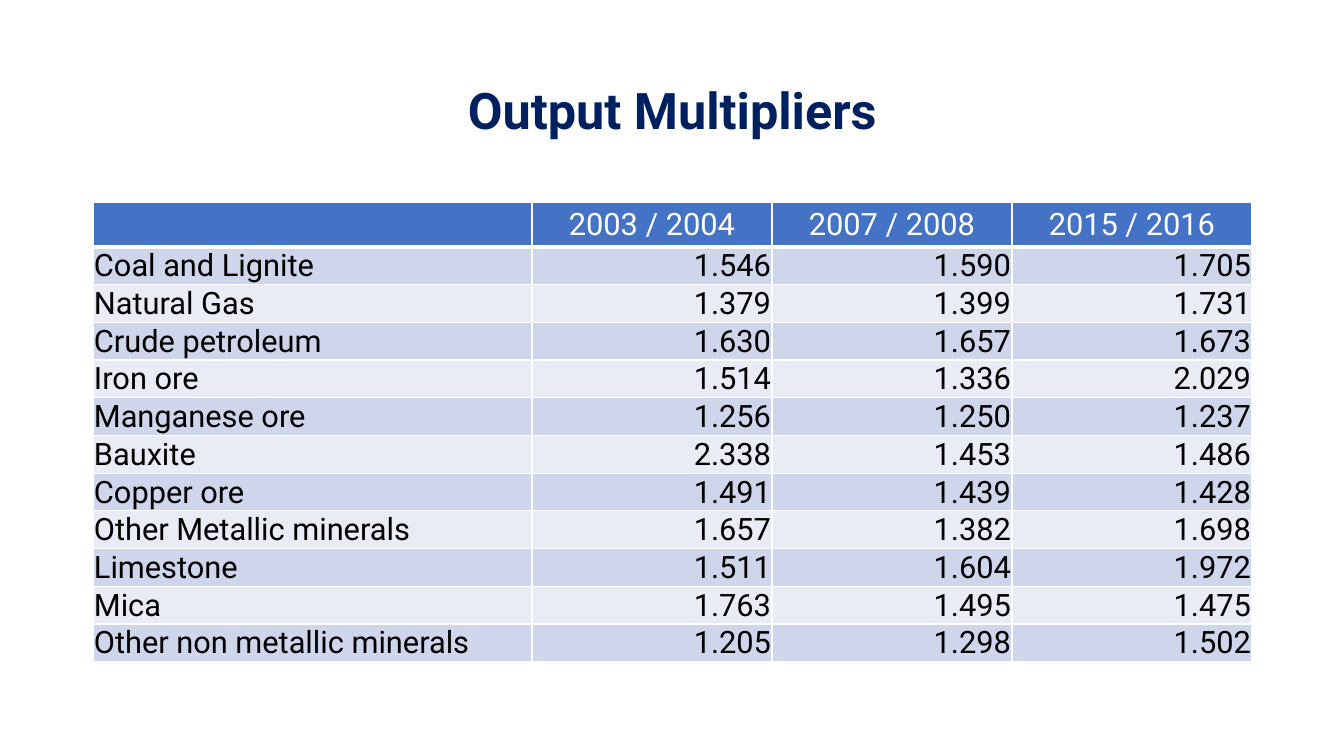
import pptx
import pptx.dml.color
import pptx.enum.text
import pptx.oxml
import pptx.oxml.ns
import pptx.util

PX = 12192000 / 1344
FONT = "Roboto"
NAVY = pptx.dml.color.RGBColor(0x00, 0x20, 0x60)
BLUE = pptx.dml.color.RGBColor(0x44, 0x72, 0xC4)
BAND_DARK = pptx.dml.color.RGBColor(0xCF, 0xD5, 0xEA)
BAND_LIGHT = pptx.dml.color.RGBColor(0xE9, 0xEB, 0xF5)
WHITE = pptx.dml.color.RGBColor(0xFF, 0xFF, 0xFF)
BLACK = pptx.dml.color.RGBColor(0x00, 0x00, 0x00)
ALIGN = pptx.enum.text.PP_ALIGN
MIDDLE = pptx.enum.text.MSO_ANCHOR.MIDDLE

ROWS = [
    ("", "2003 / 2004", "2007 / 2008", "2015 / 2016"),
    ("Coal and Lignite", "1.546", "1.590", "1.705"),
    ("Natural Gas", "1.379", "1.399", "1.731"),
    ("Crude petroleum", "1.630", "1.657", "1.673"),
    ("Iron ore", "1.514", "1.336", "2.029"),
    ("Manganese ore", "1.256", "1.250", "1.237"),
    ("Bauxite", "2.338", "1.453", "1.486"),
    ("Copper ore", "1.491", "1.439", "1.428"),
    ("Other Metallic minerals", "1.657", "1.382", "1.698"),
    ("Limestone", "1.511", "1.604", "1.972"),
    ("Mica", "1.763", "1.495", "1.475"),
    ("Other non metallic minerals", "1.205", "1.298", "1.502"),
]
COL_WIDTHS = [439, 240, 240, 240]
HEADER_HEIGHT = 45
BODY_HEIGHT = 415


def px(n):
    return pptx.util.Emu(round(n * PX))


def add_border(cell, side, width):
    cell._tc.get_or_add_tcPr().append(pptx.oxml.parse_xml(
        f'<a:{side} {pptx.oxml.ns.nsdecls("a")} w="{pptx.util.Pt(width)}">'
        f'<a:solidFill><a:srgbClr val="{WHITE}"/></a:solidFill></a:{side}>'))


prs = pptx.Presentation()
prs.slide_width = px(1344)
prs.slide_height = px(756)
s = prs.slides.add_slide(prs.slide_layouts[5])

title = s.shapes.title
title.left, title.top, title.width, title.height = px(93), px(40), px(1159), px(146)
tf = title.text_frame
tf.text = "Output Multipliers"
tf.word_wrap = True
tf.vertical_anchor = MIDDLE
p = tf.paragraphs[0]
p.alignment = ALIGN.CENTER
p.line_spacing = 0.9
r = p.runs[0]
r.font.name = FONT
r.font.size = pptx.util.Pt(36)
r.font.bold = True
r.font.color.rgb = NAVY

table = s.shapes.add_table(
    len(ROWS), len(COL_WIDTHS), px(93), px(202),
    px(sum(COL_WIDTHS)), px(HEADER_HEIGHT + BODY_HEIGHT)).table
for column, width in zip(table.columns, COL_WIDTHS):
    column.width = px(width)

for i, values in enumerate(ROWS):
    header = i == 0
    table.rows[i].height = px(HEADER_HEIGHT if header else BODY_HEIGHT / (len(ROWS) - 1))
    for j, value in enumerate(values):
        cell = table.cell(i, j)
        add_border(cell, "lnL", 1)
        add_border(cell, "lnR", 1)
        add_border(cell, "lnT", 3 if i == 1 else 1)
        add_border(cell, "lnB", 3 if header else 1)
        cell.fill.solid()
        cell.fill.fore_color.rgb = BLUE if header else BAND_DARK if i % 2 else BAND_LIGHT
        if not value:
            continue
        cell.vertical_anchor = MIDDLE
        cell.margin_left = cell.margin_right = cell.margin_top = px(1)
        cell.margin_bottom = 0
        cell.text_frame.text = value
        p = cell.text_frame.paragraphs[0]
        p.alignment = ALIGN.CENTER if header else ALIGN.RIGHT if j else ALIGN.LEFT
        r = p.runs[0]
        r.font.name = FONT
        r.font.size = pptx.util.Pt(22)
        r.font.bold = False
        r.font.color.rgb = WHITE if header else BLACK

prs.save("out.pptx")
